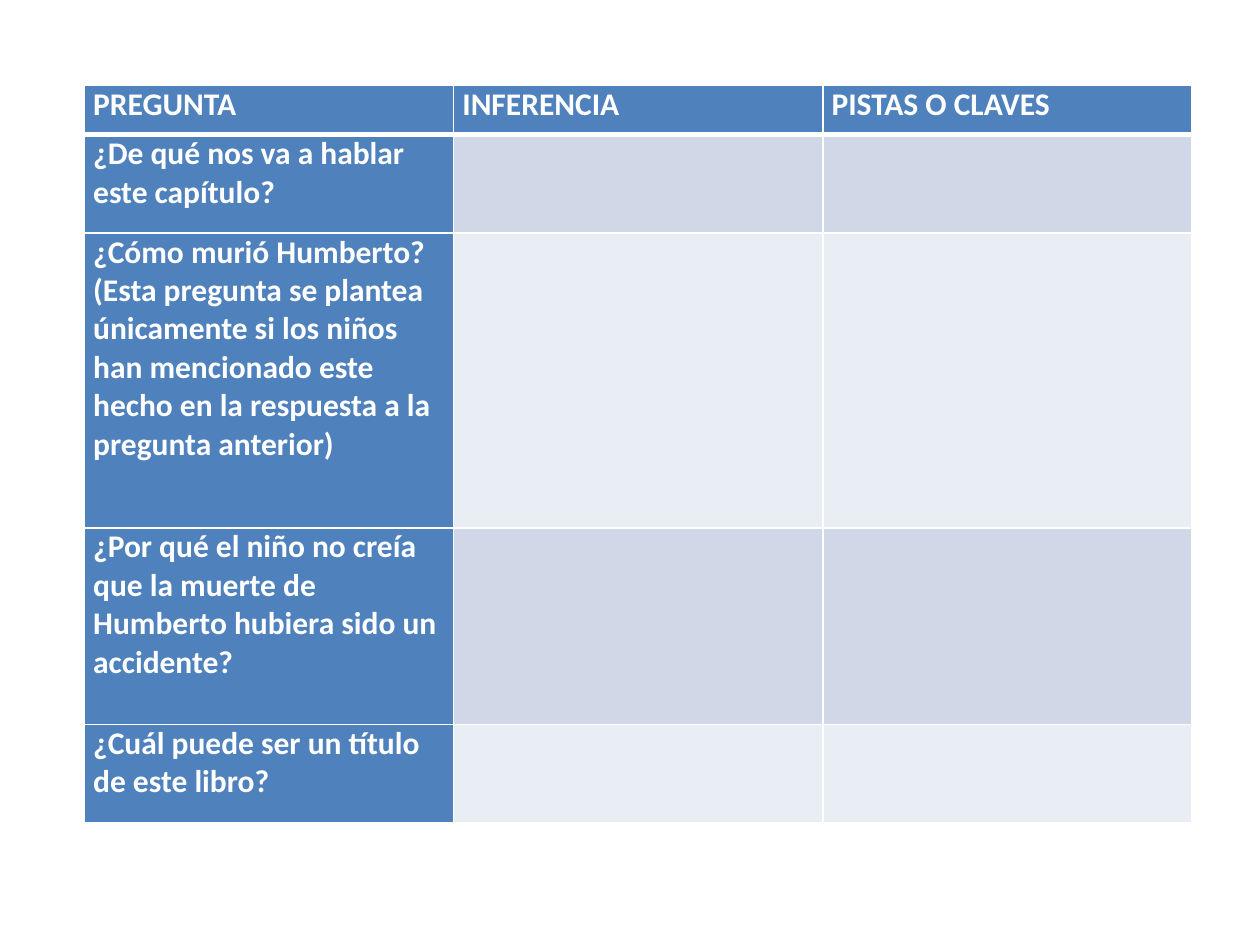
from lxml import etree
from pptx import Presentation, util as u
from pptx.dml.color import RGBColor
from pptx.oxml.ns import qn

# Colours
BLUE = RGBColor(0x4F, 0x81, 0xBD)
BAND_DARK = RGBColor(0xD0, 0xD8, 0xE8)
BAND_LIGHT = RGBColor(0xE9, 0xED, 0xF4)
WHITE = RGBColor(0xFF, 0xFF, 0xFF)

# Grid: equal columns, rows counted in lines of one height
LEFT, TOP = 0.67, 0.68
COLUMN_WIDTH = 2.93
LINE_HEIGHT = 0.39
ROW_LINES = [1, 2, 6, 4, 2]

HEADINGS = ["PREGUNTA", "INFERENCIA", "PISTAS O CLAVES"]
QUESTIONS = [
    "¿De qué nos va a hablar este capítulo?",
    "¿Cómo murió Humberto? (Esta pregunta se plantea únicamente si los niños "
    "han mencionado este hecho en la respuesta a la pregunta anterior)",
    "¿Por qué el niño no creía que la muerte de Humberto hubiera sido un accidente?",
    "¿Cuál puede ser un título de este libro?",
]


def set_borders(cell, top=1, bottom=1):
    """Give a cell white borders, with widths in points."""
    properties = cell._tc.get_or_add_tcPr()
    sides = {"a:lnL": 1, "a:lnR": 1, "a:lnT": top, "a:lnB": bottom}
    for position, (tag, width) in enumerate(sides.items()):
        line = etree.Element(qn(tag), w=str(u.Pt(width)))
        fill = etree.SubElement(line, qn("a:solidFill"))
        etree.SubElement(fill, qn("a:srgbClr"), val=str(WHITE))
        properties.insert(position, line)


def fill_cell(cell, color):
    cell.fill.solid()
    cell.fill.fore_color.rgb = color
    cell.margin_left = cell.margin_right = u.Inches(0.07)
    cell.margin_top = cell.margin_bottom = 0


def write_cell(cell, words):
    run = cell.text_frame.paragraphs[0].add_run()
    run.text = words
    run.font.name = "Calibri"
    run.font.size = u.Pt(18)
    run.font.bold = True
    run.font.color.rgb = WHITE


def add_question_table(slide):
    rows = [HEADINGS] + [[question, "", ""] for question in QUESTIONS]
    frame = slide.shapes.add_table(
        len(rows), len(HEADINGS), u.Inches(LEFT), u.Inches(TOP),
        u.Inches(COLUMN_WIDTH * len(HEADINGS)),
        u.Inches(LINE_HEIGHT * sum(ROW_LINES)))
    table = frame.table
    for column in table.columns:
        column.width = u.Inches(COLUMN_WIDTH)

    for r, (words_in_row, lines) in enumerate(zip(rows, ROW_LINES)):
        table.rows[r].height = u.Inches(LINE_HEIGHT * lines)
        band = BAND_DARK if r % 2 else BAND_LIGHT
        for c, words in enumerate(words_in_row):
            cell = table.cell(r, c)
            fill_cell(cell, BLUE if r == 0 or c == 0 else band)
            # A thick rule separates the headings from the questions
            set_borders(cell, top=3 if r == 1 else 1, bottom=3 if r == 0 else 1)
            if words:
                write_cell(cell, words)


def main():
    presentation = Presentation()
    presentation.slide_width = u.Inches(10)
    presentation.slide_height = u.Inches(7.5)
    slide = presentation.slides.add_slide(presentation.slide_layouts[6])
    add_question_table(slide)
    presentation.save("out.pptx")


if __name__ == "__main__":
    main()
